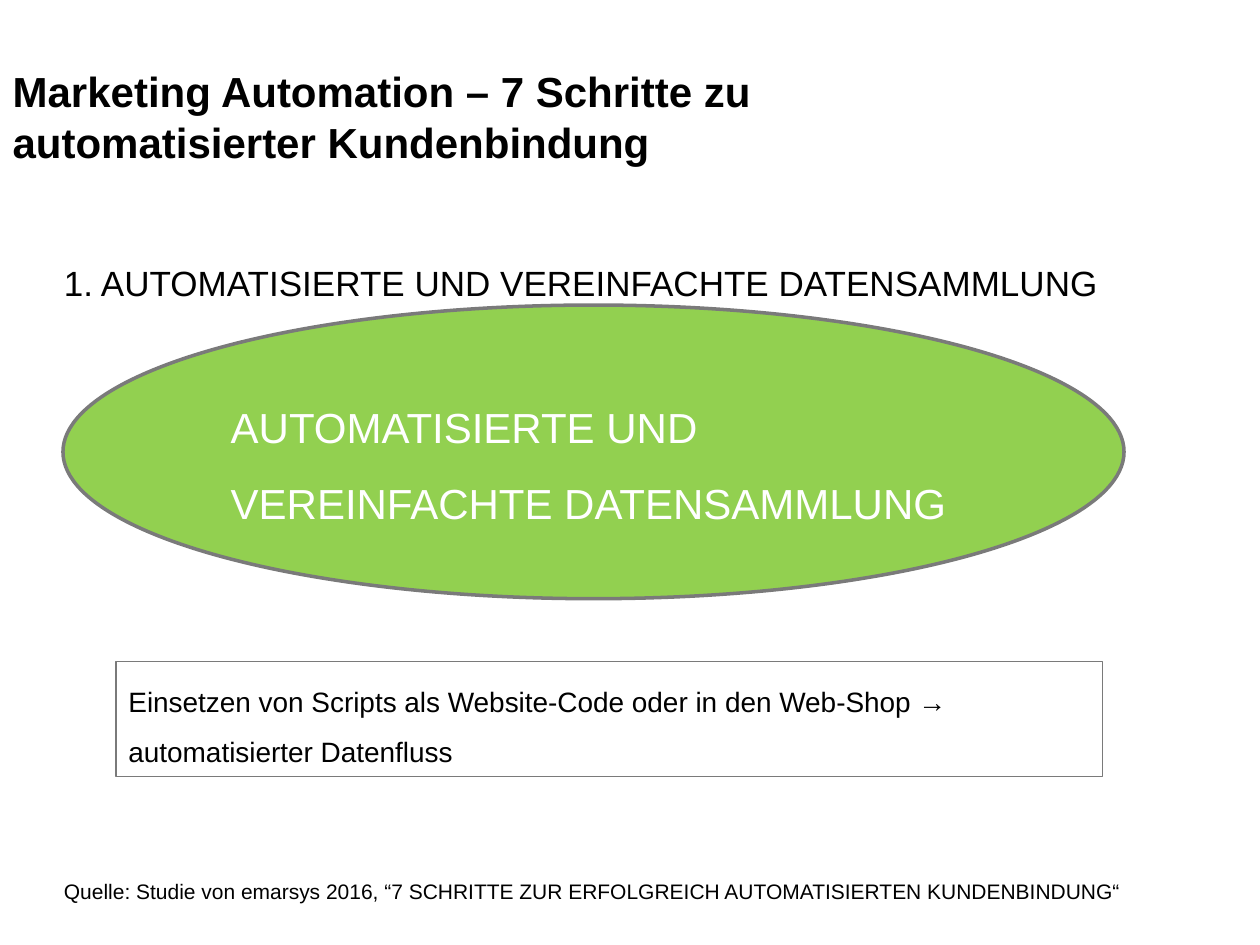
import pptx
import pptx.util
import pptx.dml.color
import pptx.enum.shapes
import pptx.enum.text

Cm, Pt = pptx.util.Cm, pptx.util.Pt
RGB = pptx.dml.color.RGBColor.from_string
MSO_SHAPE = pptx.enum.shapes.MSO_SHAPE
ANCHOR = pptx.enum.text.MSO_ANCHOR
AUTO_SIZE = pptx.enum.text.MSO_AUTO_SIZE
LEFT = pptx.enum.text.PP_ALIGN.LEFT

THEME = {
    "font": "Arial",
    "ink": "000000",
    "light": "FFFFFF",
    "accent": "92D050",
    "outline": "7A7A7A",
    "title": 24,
    "heading": 20,
    "step": 24,
    "note": 16,
    "source": 12,
}

PARTS = [
    {"role": "title", "at": (0, 1.19, 17.09, 2.31), "bold": True, "anchor": ANCHOR.MIDDLE,
     "text": "Marketing Automation – 7 Schritte zu automatisierter Kundenbindung"},
    {"role": "heading", "at": (1.04, 4.29, 23.7, 1.96), "spacing": 2.0,
     "text": "1. AUTOMATISIERTE UND VEREINFACHTE DATENSAMMLUNG"},
    {"role": "source", "at": (1.04, 17.58, 22.02, 0.76), "wrap": False,
     "text": "Quelle: Studie von emarsys 2016, “7 SCHRITTE ZUR ERFOLGREICH "
             "AUTOMATISIERTEN KUNDENBINDUNG“"},
    {"role": "step", "at": (1.27, 6.15, 21.39, 5.92), "spacing": 1.5, "anchor": ANCHOR.MIDDLE,
     "outline": (MSO_SHAPE.OVAL, 2), "fill": "accent", "ink": "light",
     "text": "AUTOMATISIERTE UND VEREINFACHTE DATENSAMMLUNG"},
    {"role": "note", "at": (2.34, 13.34, 19.89, 2.31), "spacing": 1.5,
     "outline": (MSO_SHAPE.RECTANGLE, 0.75),
     "text": "Einsetzen von Scripts als Website-Code oder in den Web-Shop → "
             "automatisierter Datenfluss"},
]


def apply(target, values):
    for name, value in values.items():
        setattr(target, name, value)


def add_part(slide, part):
    place = [Cm(length) for length in part["at"]]
    if part["role"] == "title":
        holder = slide.shapes.title
        apply(holder, dict(zip(("left", "top", "width", "height"), place)))
    elif "outline" in part:
        outline, weight = part["outline"]
        holder = slide.shapes.add_shape(outline, *place)
        holder.shadow.inherit = False
        holder.line.color.rgb = RGB(THEME["outline"])
        holder.line.width = Pt(weight)
        if "fill" in part:
            holder.fill.solid()
            holder.fill.fore_color.rgb = RGB(THEME[part["fill"]])
        else:
            holder.fill.background()
    else:
        holder = slide.shapes.add_textbox(*place)

    frame = holder.text_frame
    frame.text = part["text"]
    apply(frame, {
        "word_wrap": part.get("wrap", True),
        "auto_size": AUTO_SIZE.NONE,
        "vertical_anchor": part.get("anchor", ANCHOR.TOP),
    })
    paragraph = frame.paragraphs[0]
    apply(paragraph, {"alignment": LEFT, "line_spacing": part.get("spacing", 1.0)})
    font = paragraph.runs[0].font
    apply(font, {
        "name": THEME["font"],
        "size": Pt(THEME[part["role"]]),
        "bold": part.get("bold", False),
    })
    font.color.rgb = RGB(THEME[part.get("ink", "ink")])


def main():
    deck = pptx.Presentation()
    apply(deck, {"slide_width": Cm(25.4), "slide_height": Cm(19.05)})
    slide = deck.slides.add_slide(deck.slide_layouts.get_by_name("Title Only"))
    for part in PARTS:
        add_part(slide, part)
    deck.save("out.pptx")


if __name__ == "__main__":
    main()
